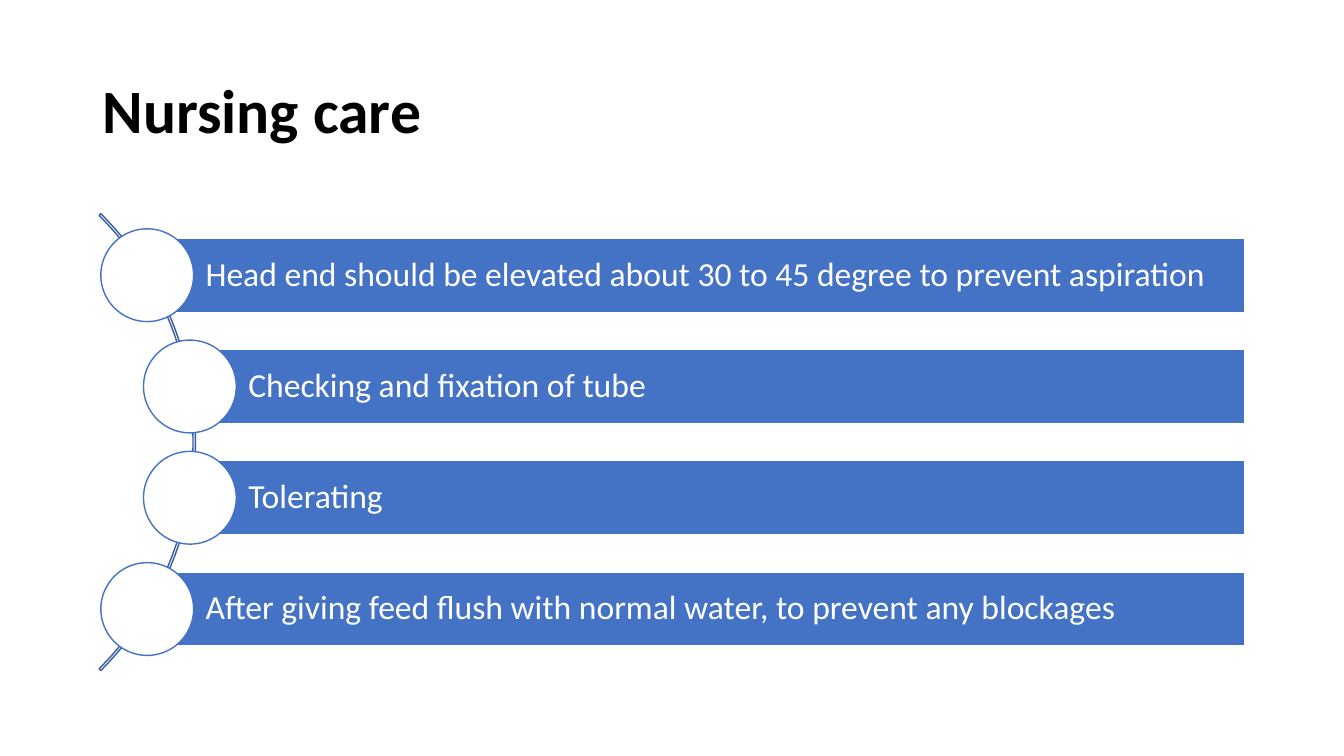
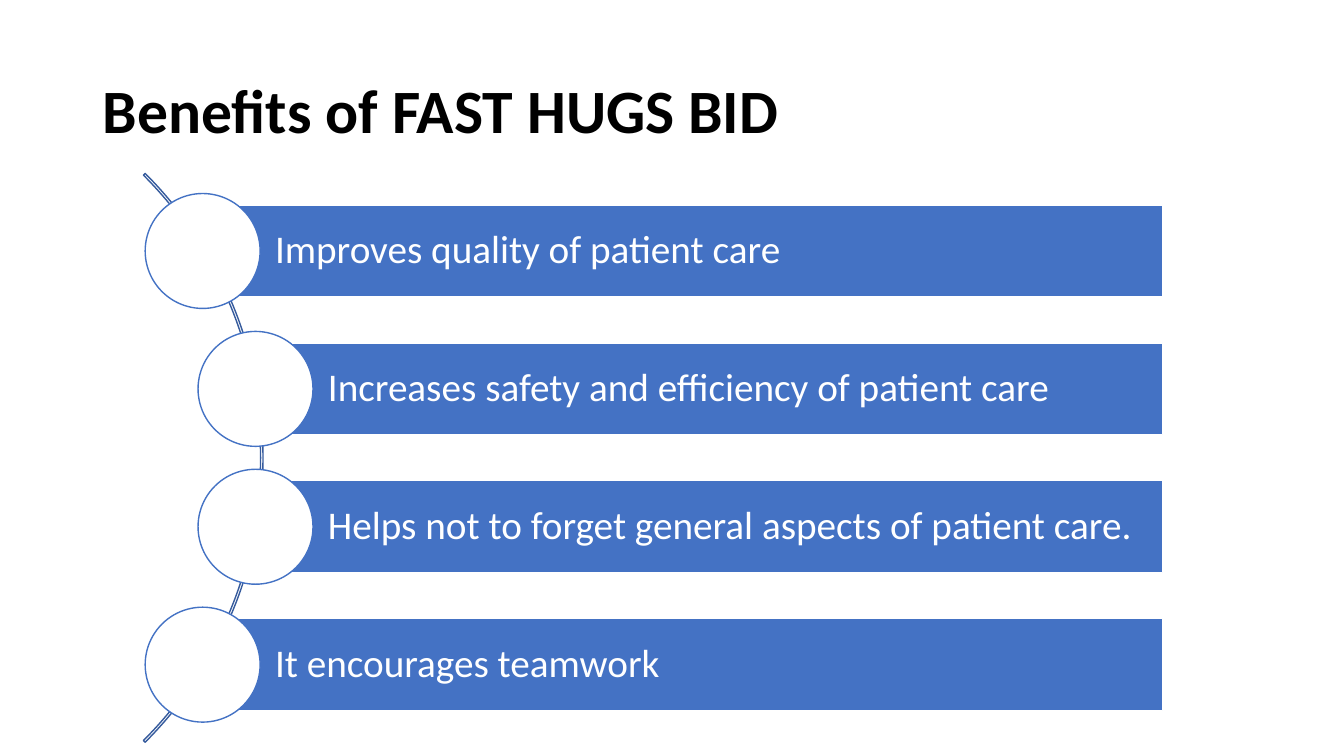
"""Build two slides that list care points along a curved spine."""
import dataclasses
import math

import pptx
import pptx.dml.color
import pptx.enum.shapes
import pptx.enum.text
import pptx.util

Inches = pptx.util.Inches
Pt = pptx.util.Pt
RGBColor = pptx.dml.color.RGBColor
Shape = pptx.enum.shapes.MSO_SHAPE

BLACK = RGBColor(0x00, 0x00, 0x00)
WHITE = RGBColor(0xFF, 0xFF, 0xFF)
BLUE = RGBColor(0x44, 0x72, 0xC4)
DARK_BLUE = RGBColor(0x36, 0x5B, 0x9D)

TITLE_FONT = {"name": "Calibri", "size": Pt(44), "bold": True}
POINT_FONT = {"name": "Calibri", "bold": False}
SPINE_THICKNESS = Pt(1.75)


@dataclasses.dataclass
class CareList:
    title: str
    points: list
    left: float
    top: float
    right: float
    disc: float
    spine: float
    text_size: int
    margin: float


CARE_LISTS = [
    CareList(
        "Nursing care",
        [
            "Head end should be elevated about 30 to 45 degree to prevent aspiration",
            "Checking and fixation of tube",
            "Tolerating",
            "After giving feed flush with normal water, to prevent any blockages",
        ],
        left=1, top=2.27, right=12.35, disc=0.92, spine=6.41,
        text_size=24, margin=0.07,
    ),
    CareList(
        "Benefits of FAST HUGS BID",
        [
            "Improves quality of patient care",
            "Increases safety and efficiency of patient care",
            "Helps not to forget general aspects of patient care.",
            "It encourages teamwork",
        ],
        left=1.44, top=1.92, right=11.53, disc=1.14, spine=7.98,
        text_size=28, margin=0.08,
    ),
]


def set_format(target, values):
    for attribute, value in values.items():
        setattr(target, attribute, value)


def write_text(frame, text, font, color, margins):
    set_format(frame, {
        "word_wrap": True,
        "vertical_anchor": pptx.enum.text.MSO_ANCHOR.MIDDLE,
        **margins,
    })
    paragraph = frame.paragraphs[0]
    set_format(paragraph, {
        "alignment": pptx.enum.text.PP_ALIGN.LEFT,
        "line_spacing": 0.9,
    })
    run = paragraph.add_run()
    run.text = text
    set_format(run.font, font)
    run.font.color.rgb = color


def add_title(slide, text):
    title = slide.shapes.add_textbox(
        Inches(0.92), Inches(0.4), Inches(11.5), Inches(1.45))
    write_text(title.text_frame, text, TITLE_FONT, BLACK, {})


def add_outlined(slide, preset, left, top, width, height, line, fill=None):
    shape = slide.shapes.add_shape(
        preset, Inches(left), Inches(top), Inches(width), Inches(height))
    shape.shadow.inherit = False
    if fill is None:
        shape.fill.background()
    else:
        shape.fill.solid()
        shape.fill.fore_color.rgb = fill
    shape.line.color.rgb = line
    shape.line.width = Pt(1)
    return shape


def add_spine(slide, care, pitch):
    radius = care.spine / 2
    middle = care.top + (pitch * (len(care.points) - 1) + care.disc) / 2
    left = care.left - radius * (1 + math.cos(math.radians(45)))
    spine = add_outlined(slide, Shape.BLOCK_ARC, left, middle - radius,
                         care.spine, care.spine, DARK_BLUE)
    thickness = SPINE_THICKNESS / Inches(care.spine)
    for index, value in enumerate((189, 27, thickness)):
        spine.adjustments[index] = value


def add_point(slide, care, text, left, top):
    bar_left = left + care.disc / 2
    bar = add_outlined(slide, Shape.RECTANGLE, bar_left, top + 0.1 * care.disc,
                       care.right - bar_left, 0.8 * care.disc, WHITE, BLUE)
    margins = {f"margin_{side}": Inches(care.margin)
               for side in ("top", "right", "bottom")}
    margins["margin_left"] = Inches(0.63 * care.disc)
    font = {**POINT_FONT, "size": Pt(care.text_size)}
    write_text(bar.text_frame, text, font, WHITE, margins)
    add_outlined(slide, Shape.OVAL, left, top, care.disc, care.disc, BLUE, WHITE)


def add_care_slide(deck, care):
    slide = deck.slides.add_slide(deck.slide_layouts[6])
    add_title(slide, care.title)
    pitch = 1.2 * care.disc
    add_spine(slide, care, pitch)
    last = len(care.points) - 1
    for row, text in enumerate(care.points):
        indent = 0 if row in (0, last) else 0.46 * care.disc
        add_point(slide, care, text, care.left + indent, care.top + row * pitch)


def main():
    deck = pptx.Presentation()
    set_format(deck, {"slide_width": Inches(13.33), "slide_height": Inches(7.5)})
    for care in CARE_LISTS:
        add_care_slide(deck, care)
    deck.save("out.pptx")


if __name__ == "__main__":
    main()
